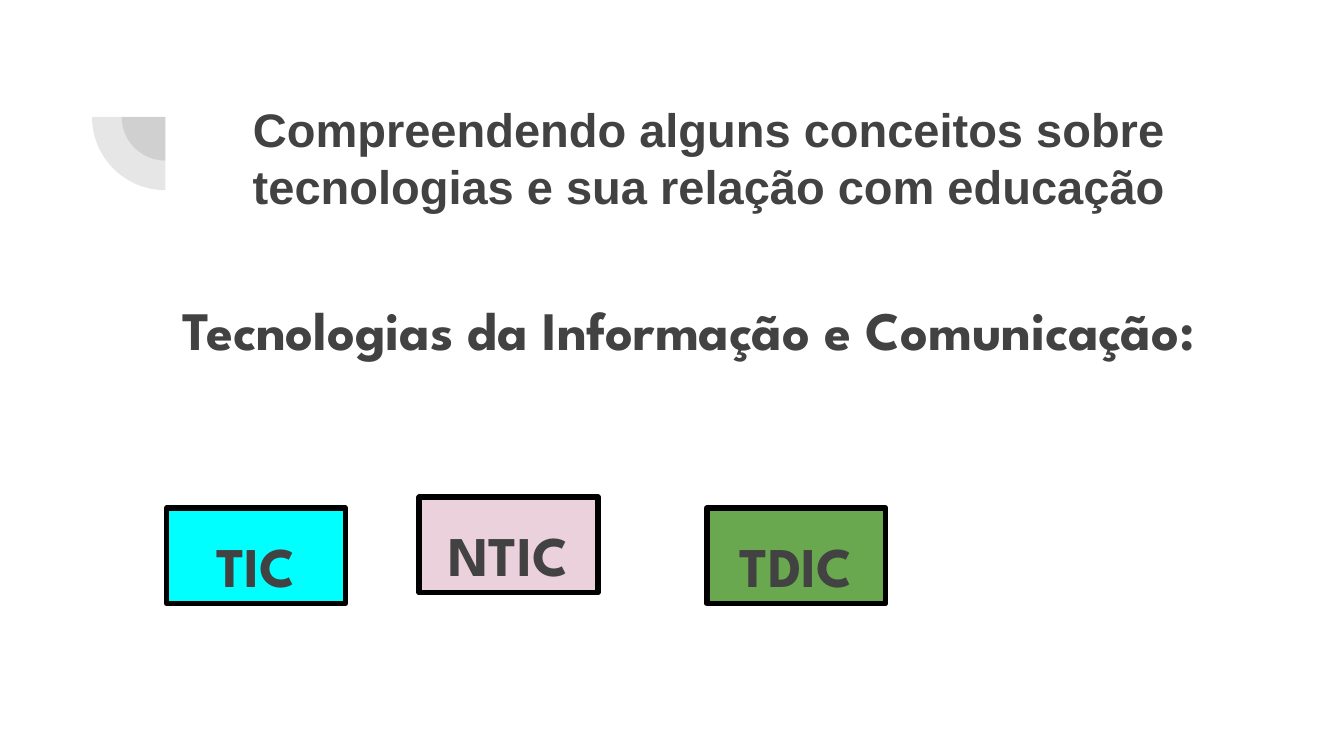
from dataclasses import dataclass

from lxml.etree import SubElement
from pptx import Presentation
from pptx.dml.color import RGBColor
from pptx.enum.shapes import MSO_SHAPE
from pptx.enum.text import MSO_ANCHOR, MSO_AUTO_SIZE, PP_ALIGN
from pptx.oxml.ns import qn
from pptx.shapes.autoshape import Shape
from pptx.slide import Slide
from pptx.util import Inches, Pt

GRAY = "424242"
HEADING_FONT = "League Spartan"
SLIDE_WIDTH = Inches(10)
SLIDE_HEIGHT = SLIDE_WIDTH * 9 // 16
ARC_CENTER = (1.23, 0.87)
TERM_WIDTH, TERM_HEIGHT = 1.33, 0.71


@dataclass(frozen=True)
class Term:
    label: str
    left: float
    top: float
    fill: str


TERMS = [
    Term("NTIC", 3.12, 3.70, "EAD1DC"),
    Term("TIC", 1.24, 3.78, "00FFFF"),
    Term("TDIC", 5.26, 3.78, "6AA84F"),
]


def color(value: str) -> RGBColor:
    return RGBColor.from_string(value)


def write(shape: Shape, text: str, size: float, font: str,
          spacing: float = 1.0, after: float = 0) -> None:
    """Fill a shape with one centred bold paragraph."""
    frame = shape.text_frame
    frame.word_wrap = True
    frame.margin_left = frame.margin_right = Inches(0.1)
    frame.margin_top = frame.margin_bottom = Inches(0.1)
    frame.vertical_anchor = MSO_ANCHOR.TOP
    paragraph = frame.paragraphs[0]
    paragraph.alignment = PP_ALIGN.CENTER
    paragraph.line_spacing = spacing
    paragraph.space_before = Pt(0)
    paragraph.space_after = Pt(after)
    run = paragraph.add_run()
    run.text = text
    run.font.size = Pt(size)
    run.font.name = font
    run.font.bold = True
    run.font.color.rgb = color(GRAY)


def write_heading(shape: Shape, text: str, size: float) -> None:
    write(shape, text, size, HEADING_FONT, spacing=1.15, after=12)
    shape.text_frame.auto_size = MSO_AUTO_SIZE.SHAPE_TO_FIT_TEXT


def add_quarter(slide: Slide, diameter: float) -> None:
    """Draw a translucent lower-left quarter disc around the arc center."""
    left, top = (Inches(middle - diameter / 2) for middle in ARC_CENTER)
    quarter = slide.shapes.add_shape(
        MSO_SHAPE.PIE, left, top, Inches(diameter), Inches(diameter))
    quarter.adjustments[0] = 108
    quarter.adjustments[1] = 162
    quarter.rotation = 270
    quarter.shadow.inherit = False
    quarter.line.fill.background()
    quarter.fill.solid()
    quarter.fill.fore_color.rgb = color(GRAY)
    fill_color = quarter.element.spPr.find(qn("a:solidFill"))[0]
    SubElement(fill_color, qn("a:alpha"), val="13000")


def add_term(slide: Slide, term: Term) -> None:
    box = slide.shapes.add_shape(
        MSO_SHAPE.RECTANGLE, Inches(term.left), Inches(term.top),
        Inches(TERM_WIDTH), Inches(TERM_HEIGHT))
    box.shadow.inherit = False
    box.fill.solid()
    box.fill.fore_color.rgb = color(term.fill)
    box.line.color.rgb = color("000000")
    box.line.width = Pt(3)
    write_heading(box, term.label, 30)


def main() -> None:
    presentation = Presentation()
    presentation.slide_width = SLIDE_WIDTH
    presentation.slide_height = SLIDE_HEIGHT
    slide = presentation.slides.add_slide(presentation.slide_layouts[5])

    for diameter in (0.65, 1.09):
        add_quarter(slide, diameter)

    title = slide.shapes.title
    title.left, title.top = Inches(1.43), Inches(0.65)
    title.width, title.height = Inches(7.69), Inches(1.09)
    write(title, "Compreendendo alguns conceitos sobre tecnologias "
          "e sua relação com educação", 25.2, "Arial")
    title.text_frame.auto_size = MSO_AUTO_SIZE.NONE

    subtitle = slide.shapes.add_textbox(
        Inches(0.84), Inches(2.03), Inches(8.69), Inches(0.69))
    write_heading(subtitle, "Tecnologias da Informação e Comunicação: ", 29)

    for term in TERMS:
        add_term(slide, term)

    presentation.save("out.pptx")


if __name__ == "__main__":
    main()
